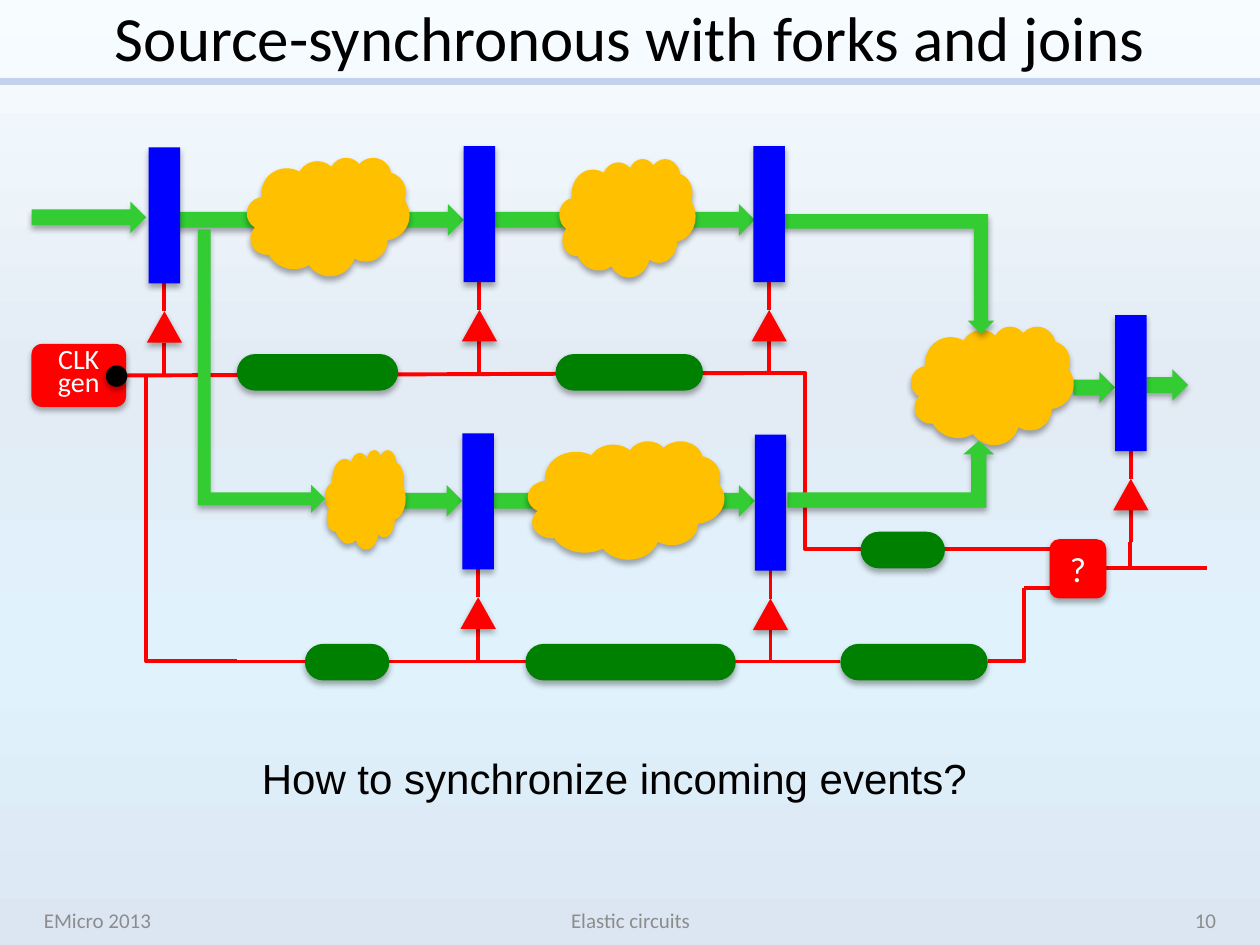
from typing import NamedTuple

from lxml import etree
from pptx import Presentation
from pptx import util as u
from pptx.dml.color import RGBColor
from pptx.enum import shapes as sh, text as tx
from pptx.oxml import parse_xml
from pptx.oxml.ns import nsdecls, qn

RED, GREEN, DARK_GREEN = "FF0000", "33CC33", "008000"
BLUE, AMBER, BLACK, WHITE = "0000FF", "FFC000", "000000", "FFFFFF"
GREY, RULE = "8C8C8C", "C2D1ED"
Kind = sh.MSO_SHAPE
Align = tx.PP_ALIGN


class Box(NamedTuple):
    left: float
    top: float
    width: float
    height: float


class BentArrow(NamedTuple):
    box: Box
    adjustments: tuple
    rotation: float = 0
    flip: bool = False


class Wire(NamedTuple):
    start: tuple
    end: tuple
    preset: str = "line"


def inches(values):
    return [u.Inches(v) for v in values]


def paint(color_format, color: str):
    color_format.rgb = RGBColor.from_string(color)


def add_shadow(shape):
    shape.shadow.inherit = False
    effects = shape._element.spPr.find(qn("a:effectLst"))
    effects.append(parse_xml(
        f'<a:outerShdw {nsdecls("a")} blurRad="{u.Pt(3.5)}" dist="{u.Pt(2.2)}" '
        'dir="5400000" rotWithShape="0"><a:srgbClr val="000000">'
        '<a:alpha val="32000"/></a:srgbClr></a:outerShdw>'))


def add_part(slide, kind, box: Box, color: str, adjustments=()):
    part = slide.shapes.add_shape(kind, *inches(box))
    part.fill.solid()
    paint(part.fill.fore_color, color)
    part.line.fill.background()
    for i, value in enumerate(adjustments):
        part.adjustments[i] = value
    add_shadow(part)
    return part


def add_wire(slide, wire: Wire, color=RED, width=2.25):
    kind = sh.MSO_CONNECTOR.STRAIGHT if wire.preset == "line" else sh.MSO_CONNECTOR.ELBOW
    line = slide.shapes.add_connector(kind, *inches(wire.start + wire.end))
    paint(line.line.color, color)
    line.line.width = u.Pt(width)
    properties = line._element.spPr
    properties.find(qn("a:prstGeom")).set("prst", wire.preset)
    etree.SubElement(properties, qn("a:effectLst"))
    return line


def write(shape, text, size, color, font="Calibri", align=Align.LEFT,
          anchor=tx.MSO_ANCHOR.MIDDLE, wrap=True, spacing=None):
    frame = shape.text_frame
    frame.word_wrap = wrap
    frame.auto_size = tx.MSO_AUTO_SIZE.NONE
    frame.vertical_anchor = anchor
    paragraph = frame.paragraphs[0]
    paragraph.text = text
    paragraph.alignment = align
    if spacing:
        paragraph.line_spacing = u.Pt(spacing)
    for run in paragraph.runs:
        run.font.size, run.font.name = u.Pt(size), font
        paint(run.font.color, color)


def add_clock_buffer(slide, left: float, top: float):
    """Triangle with a wire above and below, under the register at left, top."""
    center = left + 0.125
    for start in (1.05, 1.55):
        add_wire(slide, Wire((center, top + start), (center, top + start + 0.25)))
    add_part(slide, Kind.ISOSCELES_TRIANGLE,
             Box(left - 0.015, top + 1.3, 0.28, 0.25), RED)


def set_background(slide, stops):
    fill = slide.background.fill
    fill.gradient()
    fill.gradient_angle = 270
    stop_list = slide._element.find(".//" + qn("a:gsLst"))
    for old in list(stop_list):
        stop_list.remove(old)
    for percent, color in stops:
        stop = etree.SubElement(stop_list, qn("a:gs"), pos=str(percent * 1000))
        etree.SubElement(stop, qn("a:srgbClr"), val=color)


REGISTERS = [(1.18, 1.17), (3.68, 1.16), (5.98, 1.16),
             (3.67, 3.44), (5.99, 3.45), (8.85, 2.5)]
WIRES = [
    Wire((1, 2.98), (6.11, 2.96)),
    Wire((1.88, 5.25), (6.67, 5.25)),
    Wire((1.88, 5.25), (1.16, 2.97), "bentConnector2"),
    Wire((7.84, 5.25), (8.13, 4.67), "bentConnector2"),
    Wire((8.13, 4.67), (8.33, 4.67)),
    Wire((8.78, 4.51), (8.97, 4.3), "bentConnector2"),
    Wire((8.97, 4.51), (9.58, 4.51)),
]
# left, top, width
DELAYS = [(1.88, 2.81, 1.28), (4.41, 2.81, 1.17), (2.42, 5.11, 0.67),
          (4.17, 5.11, 1.67), (6.67, 5.11, 1.17), (6.83, 4.22, 0.67)]
DATA_ARROWS = [(0.25, 1.6, 0.91), (1.37, 1.62, 2.31), (3.92, 1.62, 2.07),
               (3.16, 3.85, 0.51), (3.92, 3.85, 2.07),
               (8.52, 2.95, 0.33), (9.1, 2.93, 0.33)]
CLOUDS = [Box(1.96, 1.25, 1.29, 0.94), Box(4.44, 1.26, 1.08, 0.94),
          Box(2.58, 3.57, 0.64, 0.79), Box(4.19, 3.5, 1.56, 0.94),
          Box(7.23, 2.59, 1.29, 0.94)]
BENT_ARROWS = [
    BentArrow(Box(0.95, 2.44, 2.25, 1.01), (0.1, 0.11, 0.11), rotation=90),
    BentArrow(Box(6.1, 1.7, 1.79, 0.95), (0.12, 0.11, 0.11), flip=True),
    BentArrow(Box(6.25, 3.5, 1.64, 0.53), (0.23, 0.23, 0.2)),
]
FOOTERS = [("EMicro 2013", 0.25, 2.33, Align.LEFT),
           ("Elastic circuits", 3.42, 3.17, Align.CENTER),
           ("10", 7.42, 2.33, Align.RIGHT)]


def main():
    deck = Presentation()
    deck.slide_width, deck.slide_height = inches((10, 7.5))
    slide = deck.slides.add_slide(deck.slide_layouts[5])
    set_background(slide, [(0, "F7FDFF"), (40, "E3EBF5"),
                           (70, "E0F3FC"), (100, "DCE6F2")])

    # Title and its rule
    title = slide.shapes.title
    title.left, title.top, title.width, title.height = inches((0.5, 0, 9, 0.58))
    write(title, "Source-synchronous with forks and joins", 36, BLACK, align=Align.CENTER)
    add_wire(slide, Wire((0, 0.65), (10, 0.65)), RULE, 4)

    # Clock network
    for wire in WIRES:
        add_wire(slide, wire)
    fork = add_wire(slide, Wire((5.58, 2.96), (8.39, 4.36), "bentConnector3"))
    guides = fork._element.spPr.find(qn("a:prstGeom")).get_or_add_avLst()
    etree.SubElement(guides, qn("a:gd"), name="adj1", fmla="val 28900")
    for left, top in REGISTERS:
        add_clock_buffer(slide, left, top)
    for left, top, width in DELAYS:
        add_part(slide, Kind.ROUNDED_RECTANGLE, Box(left, top, width, 0.29),
                 DARK_GREEN, (0.5,))
    clock = add_part(slide, Kind.ROUNDED_RECTANGLE, Box(0.25, 2.73, 0.75, 0.5), RED)
    write(clock, "CLK\ngen", 16, WHITE, align=Align.CENTER, spacing=13)
    join = add_part(slide, Kind.ROUNDED_RECTANGLE, Box(8.33, 4.28, 0.45, 0.47), RED)
    write(join, "?", 20, WHITE, align=Align.CENTER)

    # Data path
    for left, top, width in DATA_ARROWS:
        add_part(slide, Kind.RIGHT_ARROW, Box(left, top, width, 0.25), GREEN)
    for cloud in CLOUDS:
        add_part(slide, Kind.CLOUD, cloud, AMBER)
    for bent in BENT_ARROWS:
        arrow = add_part(slide, Kind.BENT_UP_ARROW, bent.box, GREEN, bent.adjustments)
        arrow.rotation = bent.rotation
        if bent.flip:
            arrow._element.spPr.find(qn("a:xfrm")).set("flipV", "1")
    for left, top in REGISTERS:
        add_part(slide, Kind.RECTANGLE, Box(left, top, 0.25, 1.08), BLUE)
    add_part(slide, Kind.OVAL, Box(0.84, 2.9, 0.17, 0.17), BLACK)

    # Question and footer
    question = slide.shapes.add_textbox(*inches((1.98, 5.92, 5.86, 0.5)))
    write(question, "How to synchronize incoming events?", 24, BLACK, font="Arial",
          anchor=tx.MSO_ANCHOR.TOP, wrap=False)
    for text, left, width, align in FOOTERS:
        footer = slide.shapes.add_textbox(*inches((left, 7.1, width, 0.4)))
        write(footer, text, 12, GREY, align=align)

    deck.save("out.pptx")


if __name__ == "__main__":
    main()
